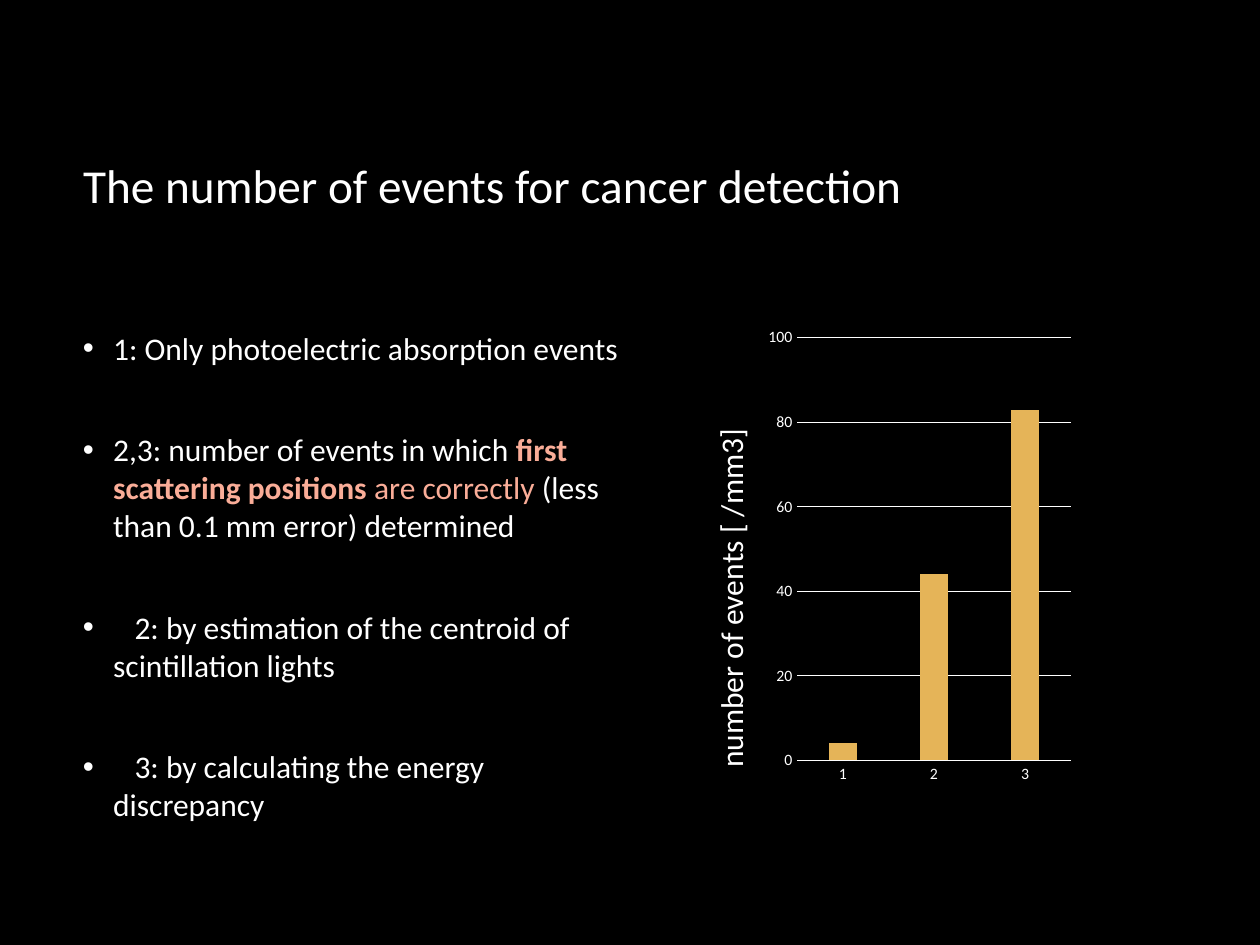
from typing import NamedTuple

from lxml import etree
from pptx import Presentation
from pptx.chart.data import CategoryChartData
from pptx.dml.color import RGBColor
from pptx.enum.chart import XL_CHART_TYPE, XL_TICK_MARK
from pptx.enum.text import MSO_ANCHOR, PP_ALIGN
from pptx.oxml import parse_xml
from pptx.oxml.ns import nsdecls, qn
from pptx.util import Inches, Pt

COLUMNS = XL_CHART_TYPE.COLUMN_CLUSTERED
NO_TICK = XL_TICK_MARK.NONE
MIDDLE = MSO_ANCHOR.MIDDLE
LEFT = PP_ALIGN.LEFT

FONT = "Calibri"
WHITE, BLACK, PEACH, GOLD = "FFFFFF", "000000", "FAAD98", "E5B458"
HANGING = 0.24
SUB_ITEM_TAB = 0.41


class Span(NamedTuple):
    text: str
    color: str = WHITE
    bold: bool = False


ITEMS = [
    [Span("1: Only photoelectric absorption events")],
    [
        Span("2,3: number of events in which "),
        Span("first scattering positions ", PEACH, True),
        Span("are correctly ", PEACH),
        Span("(less than 0.1 mm error) determined"),
    ],
    [Span("\t2: by estimation of the centroid of scintillation lights")],
    [Span("\t3: by calculating the energy discrepancy")],
]


def rgb(color: str) -> RGBColor:
    return RGBColor.from_string(color)


def style_font(font, size: float, color: str = WHITE, bold: bool = False) -> None:
    font.name, font.size, font.bold = FONT, Pt(size), bold
    font.color.rgb = rgb(color)


def add_text(paragraph, text: str, *, size: float, color: str = WHITE,
             bold: bool = False) -> None:
    run = paragraph.add_run()
    run.text = text
    style_font(run.font, size, color, bold)


def add_bullet(paragraph) -> None:
    """Give the paragraph a white bullet, a hanging indent and a sub-item tab."""
    properties = paragraph._p.get_or_add_pPr()
    properties.set("marL", str(Inches(HANGING)))
    properties.set("indent", str(-Inches(HANGING)))
    color = etree.SubElement(properties, qn("a:buClr"))
    etree.SubElement(color, qn("a:srgbClr"), val=WHITE)
    etree.SubElement(properties, qn("a:buFont"), typeface="Arial")
    etree.SubElement(properties, qn("a:buChar"), char="•")
    tabs = etree.SubElement(properties, qn("a:tabLst"))
    etree.SubElement(tabs, qn("a:tab"), pos=str(Inches(SUB_ITEM_TAB)), algn="l")


def add_heading(slide) -> None:
    heading = slide.shapes.title
    heading.left, heading.top = Inches(0.56), Inches(0.67)
    heading.width, heading.height = Inches(8.31), Inches(1.59)
    heading.text_frame.vertical_anchor = MIDDLE
    paragraph = heading.text_frame.paragraphs[0]
    paragraph.alignment = LEFT
    add_text(paragraph, "The number of events for cancer detection", size=27)


def add_items(slide, items: list[list[Span]]) -> None:
    box = slide.shapes.add_textbox(Inches(0.56), Inches(2.69), Inches(4.64), Inches(4.09))
    frame = box.text_frame
    frame.word_wrap = True
    frame.vertical_anchor = MIDDLE
    frame.margin_right, frame.margin_bottom = Inches(0.2), Inches(0.38)
    for index, spans in enumerate(items):
        paragraph = frame.add_paragraph() if index else frame.paragraphs[0]
        add_bullet(paragraph)
        if index:
            paragraph.space_before = Pt(36.5)
        for span in spans:
            add_text(paragraph, span.text, size=18, color=span.color, bold=span.bold)


def manual_layout(**fractions: float):
    """Return a chart layout placed by fractions of the chart's size."""
    target = '<c:layoutTarget val="inner"/>' if "w" in fractions else ""
    modes = "".join(f'<c:{key}Mode val="edge"/>' for key in "xy")
    values = "".join(f'<c:{key} val="{value}"/>' for key, value in fractions.items())
    return parse_xml(
        f'<c:layout {nsdecls("c")}><c:manualLayout>{target}{modes}{values}'
        "</c:manualLayout></c:layout>"
    )


def set_layout(parent, layout, position: int) -> None:
    for old in parent.findall(qn("c:layout")):
        parent.remove(old)
    parent.insert(position, layout)


def style_line(line, color: str) -> None:
    line.color.rgb = rgb(color)
    line.width = Pt(0.75)


def add_event_chart(slide) -> None:
    data = CategoryChartData()
    data.categories = ["1", "2", "3"]
    data.add_series("Series 1", [4, 44, 83])
    chart = slide.shapes.add_chart(
        COLUMNS, Inches(5.46), Inches(2.53), Inches(3.1), Inches(3.77), data
    ).chart
    chart.has_legend = chart.has_title = False
    style_font(chart.font, 10)

    plot = chart.plots[0]
    plot.gap_width, plot.overlap, plot.vary_by_categories = 219, -27, False
    bars = plot.series[0].format.fill
    bars.solid()
    bars.fore_color.rgb = rgb(GOLD)

    categories, events = chart.category_axis, chart.value_axis
    for axis in (categories, events):
        axis.major_tick_mark = axis.minor_tick_mark = NO_TICK
        style_font(axis.tick_labels.font, 9)
    style_line(categories.format.line, WHITE)
    events.minimum_scale, events.maximum_scale, events.major_unit = 0, 100, 20
    events.format.line.fill.background()
    style_line(events.major_gridlines.format.line, WHITE)

    caption = events.axis_title
    add_text(caption.text_frame.paragraphs[0], "number of events [ /mm3]", size=18)
    set_layout(caption._element, manual_layout(x=0.04, y=0.22), 1)
    set_layout(chart._chartSpace.chart.plotArea,
               manual_layout(x=0.28, y=0.04, w=0.7, h=0.89), 0)


def main() -> None:
    presentation = Presentation()
    presentation.slide_width, presentation.slide_height = Inches(10), Inches(7.5)
    slide = presentation.slides.add_slide(presentation.slide_layouts[5])
    slide.background.fill.solid()
    slide.background.fill.fore_color.rgb = rgb(BLACK)
    add_heading(slide)
    add_items(slide, ITEMS)
    add_event_chart(slide)
    presentation.save("out.pptx")


if __name__ == "__main__":
    main()
